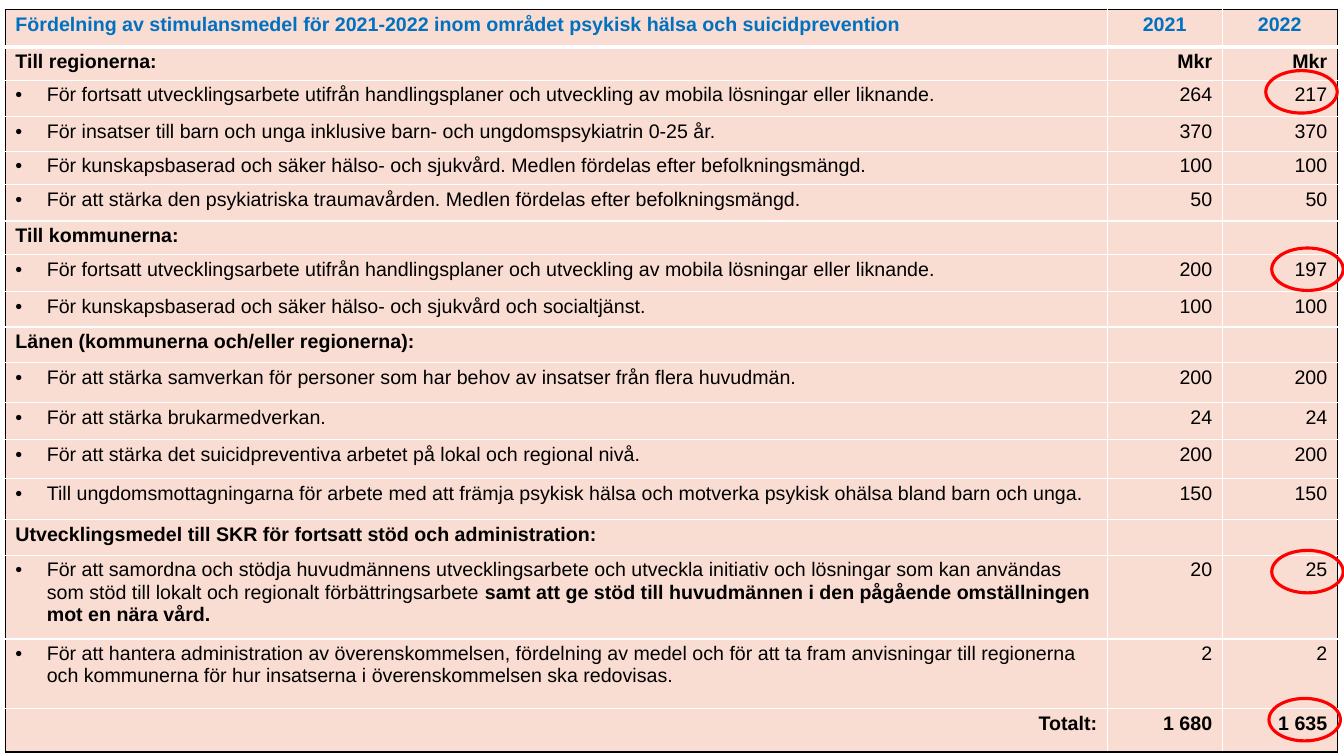
from lxml import etree
from pptx import Presentation
from pptx.dml.color import RGBColor
from pptx.enum.shapes import MSO_SHAPE
from pptx.enum.text import PP_ALIGN
from pptx.oxml.ns import qn
from pptx.util import Cm, Pt

LEFT, MID, RIGHT = PP_ALIGN.LEFT, PP_ALIGN.CENTER, PP_ALIGN.RIGHT
OVAL = MSO_SHAPE.OVAL
BLACK, WHITE, BLUE, RED, ROSE = "000000", "FFFFFF", "0070C0", "FF0000", "E6460A"
FONT, SIZE = "Arial", 14
WIDTHS = (27.76, 2.9, 2.9)
HEAD, GROUP, ITEM, TOTAL = "head", "group", "item", "total"
MOBILE = "För fortsatt utvecklingsarbete utifrån handlingsplaner och utveckling av mobila lösningar eller liknande."
ROWS = [
    (HEAD, 0.94, "Fördelning av stimulansmedel för 2021-2022 inom området psykisk hälsa och suicidprevention", "2021", "2022"),
    (GROUP, 0.84, "Till regionerna:", "Mkr", "Mkr"),
    (ITEM, 0.92, MOBILE, "264", "217"),
    (ITEM, 0.87, "För insatser till barn och unga inklusive barn- och ungdomspsykiatrin 0-25 år.", "370", "370"),
    (ITEM, 0.84, "För kunskapsbaserad och säker hälso- och sjukvård. Medlen fördelas efter befolkningsmängd.", "100", "100"),
    (ITEM, 0.92, "För att stärka den psykiatriska traumavården. Medlen fördelas efter befolkningsmängd.", "50", "50"),
    (GROUP, 0.84, "Till kommunerna:", "", ""),
    (ITEM, 0.94, MOBILE, "200", "197"),
    (ITEM, 0.89, "För kunskapsbaserad och säker hälso- och sjukvård och socialtjänst.", "100", "100"),
    (GROUP, 0.89, "Länen (kommunerna och/eller regionerna):", "", ""),
    (ITEM, 1.02, "För att stärka samverkan för personer som har behov av insatser från flera huvudmän.", "200", "200"),
    (ITEM, 0.92, "För att stärka brukarmedverkan.", "24", "24"),
    (ITEM, 0.99, "För att stärka det suicidpreventiva arbetet på lokal och regional nivå.", "200", "200"),
    (ITEM, 1.04, "Till ungdomsmottagningarna för arbete med att främja psykisk hälsa och motverka psykisk ohälsa bland barn och unga.", "150", "150"),
    (GROUP, 0.89, "Utvecklingsmedel till SKR för fortsatt stöd och administration:", "", ""),
    (ITEM, 2.11, "För att samordna och stödja huvudmännens utvecklingsarbete och utveckla initiativ och lösningar som kan användas som stöd till lokalt och regionalt förbättringsarbete |samt att ge stöd till huvudmännen i den pågående omställningen mot en nära vård.", "20", "25"),
    (ITEM, 1.76, "För att hantera administration av överenskommelsen, fördelning av medel och för att ta fram anvisningar till regionerna och kommunerna för hur insatserna i överenskommelsen ska redovisas.", "2", "2"),
    (TOTAL, 1.09, "Totalt:", "1 680", "1 635"),
]
RINGS = [(31.9, 1.78), (32.05, 6.25), (32.05, 13.87), (31.98, 17.6)]


def paint(code):
    """Turn a hex string into a colour."""
    return RGBColor.from_string(code)


def node(base, tag, **attrs):
    """Append a DrawingML element to a parent."""
    return etree.SubElement(base, qn("a:" + tag), attrs)


def write(cell, text, color=BLACK, bold=False, align=LEFT, bullet=False):
    """Fill a cell with text; what follows a bar is bold."""
    para = cell.text_frame.paragraphs[0]
    para.alignment = align
    if bullet:
        props = para._p.get_or_add_pPr()
        props.set("marL", str(Cm(0.79)))
        props.set("indent", str(Cm(-0.79)))
        node(props, "buFont", typeface=FONT)
        node(props, "buChar", char="•")
    if not text:
        node(para._p, "endParaRPr", sz=str(SIZE * 100))
        return
    for i, part in enumerate(text.split("|")):
        run = para.add_run()
        run.text = part
        run.font.name = FONT
        run.font.size = Pt(SIZE)
        run.font.bold = bold or i > 0
        run.font.color.rgb = paint(color)


def edge(cell, side, color, width):
    """Draw one border of a cell."""
    line = node(cell._tc.get_or_add_tcPr(), "ln" + side, w=str(Pt(width)))
    node(node(line, "solidFill"), "srgbClr", val=color)


def dress(cell, row, col):
    """Give a cell its margins, borders and tint."""
    cell.margin_left = cell.margin_right = Cm(0.25)
    cell.margin_top = cell.margin_bottom = Cm(0.1)
    last = len(ROWS) - 1
    edge(cell, "L", BLACK if col == 0 else WHITE, 1)
    edge(cell, "R", BLACK if col == 2 else WHITE, 1)
    edge(cell, "T", BLACK if row == 0 else WHITE, 3 if row == 1 else 1)
    edge(cell, "B", BLACK if row == last else WHITE, 3 if row == 0 else 1)
    fill = node(cell._tc.get_or_add_tcPr(), "solidFill")
    node(node(fill, "srgbClr", val=ROSE), "alpha", val="18000")


def budget(slide):
    """Build the table of grants."""
    high = sum(row[1] for row in ROWS)
    frame = slide.shapes.add_table(len(ROWS), 3, Cm(0.14), Cm(0.24), Cm(sum(WIDTHS)), Cm(high))
    table = frame.table
    table.first_row = table.horz_banding = False
    for column, width in zip(table.columns, WIDTHS):
        column.width = Cm(width)
    for r, (kind, height, *texts) in enumerate(ROWS):
        table.rows[r].height = Cm(height)
        for c, text in enumerate(texts):
            cell = table.cell(r, c)
            dress(cell, r, c)
            if c == 0:
                align = RIGHT if kind == TOTAL else LEFT
            else:
                align = MID if kind == HEAD else RIGHT
            write(cell, text, color=BLUE if kind == HEAD else BLACK, bold=kind != ITEM,
                  align=align, bullet=kind == ITEM and c == 0)


def ring(slide, left, top):
    """Circle a figure in red."""
    oval = slide.shapes.add_shape(OVAL, Cm(left), Cm(top), Cm(1.8), Cm(1.07))
    oval.shadow.inherit = False
    oval.fill.background()
    oval.line.color.rgb = paint(RED)
    oval.line.width = Pt(2.25)


def main():
    """Build and save the slide."""
    deck = Presentation()
    deck.slide_width, deck.slide_height = Cm(33.87), Cm(19.05)
    slide = deck.slides.add_slide(deck.slide_layouts[6])
    budget(slide)
    for left, top in RINGS:
        ring(slide, left, top)
    deck.save("out.pptx")


if __name__ == "__main__":
    main()
